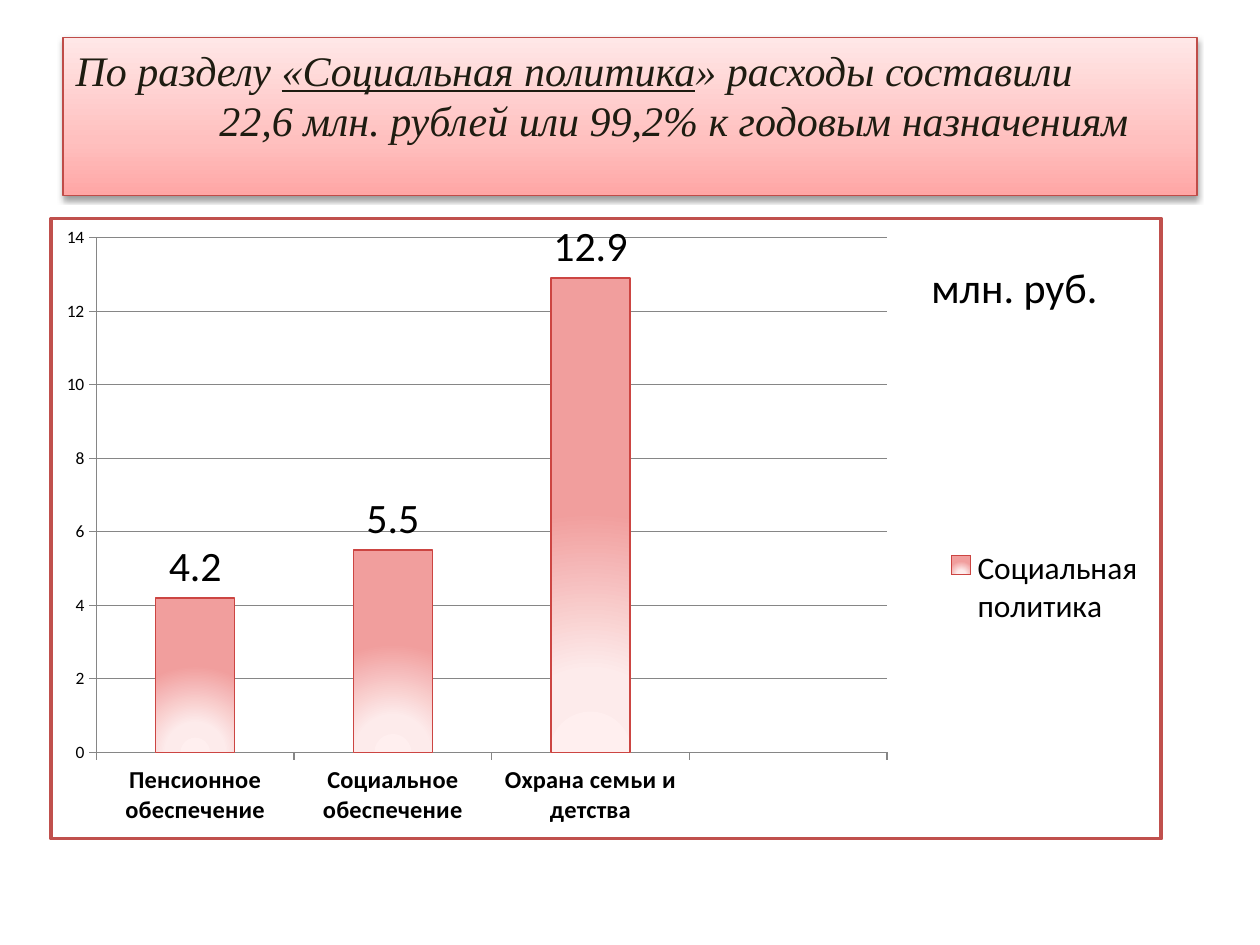
from lxml import etree
from pptx import Presentation
from pptx import util as u
from pptx.chart import data as chart_data
from pptx.dml.color import RGBColor
from pptx.enum import chart as ch
from pptx.enum import text
from pptx.oxml import parse_xml
from pptx.oxml.ns import nsdecls, qn

BLACK = RGBColor(0x00, 0x00, 0x00)
DARK = RGBColor(0x1E, 0x1C, 0x11)
GRAY = RGBColor(0x86, 0x86, 0x86)
TITLE_LINE = RGBColor(0xBF, 0x4C, 0x48)
BAR_LINE = RGBColor(0xCC, 0x45, 0x42)
TITLE_STOPS = [(0, "FFA6A5"), (35, "FFC0BF"), (100, "FFE7E7")]
BAR_STOPS = [(0, "FFEFEF"), (34, "FDEBEB"), (100, "F19E9D")]


def set_gradient(fill, properties, stops, direction):
    fill.solid()
    stop_xml = "".join(
        f'<a:gs pos="{position * 1000}"><a:srgbClr val="{color}"/></a:gs>'
        for position, color in stops
    )
    gradient = parse_xml(
        f'<a:gradFill {nsdecls("a")} rotWithShape="1"><a:gsLst>{stop_xml}</a:gsLst>'
        f"{direction}</a:gradFill>"
    )
    properties.replace(properties.find(qn("a:solidFill")), gradient)


def set_layout(parent, index, x, y, width, height, target=""):
    for old_layout in parent.findall(qn("c:layout")):
        parent.remove(old_layout)
    parent.insert(index, parse_xml(
        f'<c:layout {nsdecls("c")}><c:manualLayout>{target}'
        '<c:xMode val="edge"/><c:yMode val="edge"/>'
        f'<c:x val="{x}"/><c:y val="{y}"/><c:w val="{width}"/><c:h val="{height}"/>'
        "</c:manualLayout></c:layout>"
    ))


presentation = Presentation()
presentation.slide_width = u.Inches(10)
presentation.slide_height = u.Inches(7.5)
slide = presentation.slides.add_slide(presentation.slide_layouts[5])

title = slide.shapes.title
title.left, title.top = u.Inches(0.5), u.Inches(0.3)
title.width, title.height = u.Inches(9), u.Inches(1.25)
properties = title._element.spPr
set_gradient(title.fill, properties, TITLE_STOPS, '<a:lin ang="16200000" scaled="1"/>')
title.line.color.rgb = TITLE_LINE
title.line.width = u.Pt(0.75)
properties.append(parse_xml(
    f'<a:effectLst {nsdecls("a")}><a:outerShdw blurRad="40000" dist="20000" dir="5400000" '
    'rotWithShape="0"><a:srgbClr val="000000"><a:alpha val="38000"/></a:srgbClr>'
    "</a:outerShdw></a:effectLst>"
))
frame = title.text_frame
frame.word_wrap = True
frame.auto_size = text.MSO_AUTO_SIZE.NONE
frame.vertical_anchor = text.MSO_ANCHOR.TOP
paragraph = frame.paragraphs[0]
paragraph.alignment = text.PP_ALIGN.LEFT
indent = u.Inches(1.14)
paragraph_properties = paragraph._p.get_or_add_pPr()
paragraph_properties.set("marL", str(indent))
paragraph_properties.set("indent", str(-indent))
title_parts = [
    ("По разделу ", False),
    ("«Социальная политика", True),
    ("» расходы составили", False),
    ("22,6 млн. рублей или 99,2% к годовым назначениям", False),
]
for number, (words, underlined) in enumerate(title_parts):
    if number == 3:
        paragraph.add_line_break()
    run = paragraph.add_run()
    run.text = words
    run.font.name = "Times New Roman"
    run.font.size = u.Pt(24)
    run.font.italic = True
    run.font.underline = underlined
    run.font.color.rgb = DARK

spending = chart_data.CategoryChartData()
spending.categories = [
    "Пенсионное обеспечение", "Социальное обеспечение", "Охрана семьи и детства", "",
]
spending.add_series("Социальная политика", [4.2, 5.5, 12.9, None])
chart = slide.shapes.add_chart(
    ch.XL_CHART_TYPE.COLUMN_CLUSTERED,
    u.Inches(0.39), u.Inches(1.72), u.Inches(8.84), u.Inches(4.95), spending,
).chart
chart.has_title = False
chart.font.name = "Calibri"
chart.font.size = u.Pt(10)
chart.font.color.rgb = BLACK
chart._chartSpace.chart.addnext(parse_xml(
    f'<c:spPr {nsdecls("c", "a")}><a:solidFill><a:srgbClr val="FFFFFF"/></a:solidFill>'
    '<a:ln w="25400"><a:solidFill><a:srgbClr val="C0504D"/></a:solidFill></a:ln></c:spPr>'
))
set_layout(chart._chartSpace.chart.plotArea, 0, 0.041, 0.031, 0.712, 0.83,
           '<c:layoutTarget val="inner"/>')

plot = chart.plots[0]
plot.vary_by_categories = False
plot.gap_width = 150
series = plot.series[0]
series.invert_if_negative = False
set_gradient(
    series.format.fill, series._element.get_or_add_spPr(), BAR_STOPS,
    '<a:path path="circle"><a:fillToRect l="50000" t="155000" r="50000" b="-55000"/></a:path>',
)
series.format.line.color.rgb = BAR_LINE
series.format.line.width = u.Pt(0.75)
labels = series.data_labels
labels.show_value = True
labels.position = ch.XL_LABEL_POSITION.OUTSIDE_END
labels.font.size = u.Pt(24)

value_axis, category_axis = chart.value_axis, chart.category_axis
for axis in (value_axis, category_axis):
    axis.major_tick_mark = ch.XL_TICK_MARK.OUTSIDE
    axis.minor_tick_mark = ch.XL_TICK_MARK.NONE
    axis.format.line.color.rgb = GRAY
value_axis.minimum_scale = 0
value_axis.maximum_scale = 14
value_axis.major_unit = 2
value_axis.has_major_gridlines = True
value_axis.major_gridlines.format.line.color.rgb = GRAY
category_axis.tick_labels.font.size = u.Pt(14)
category_axis.tick_labels.font.bold = True

chart.has_legend = True
chart.legend.position = ch.XL_LEGEND_POSITION.RIGHT
chart.legend.include_in_layout = False
chart.legend.font.size = u.Pt(18)
set_layout(chart.legend._element, 1, 0.8, 0.53, 0.19, 0.13)

unit_box = slide.shapes.add_textbox(
    u.Inches(7.19), u.Inches(2.03), u.Inches(1.72), u.Inches(0.5))
unit_box.text_frame.word_wrap = True
unit_box.text_frame.auto_size = text.MSO_AUTO_SIZE.SHAPE_TO_FIT_TEXT
paragraph = unit_box.text_frame.paragraphs[0]
paragraph.text = "млн. руб."
paragraph.alignment = text.PP_ALIGN.CENTER
font = paragraph.runs[0].font
font.name = "Calibri"
font.size = u.Pt(24)
font.color.rgb = BLACK

presentation.save("out.pptx")
